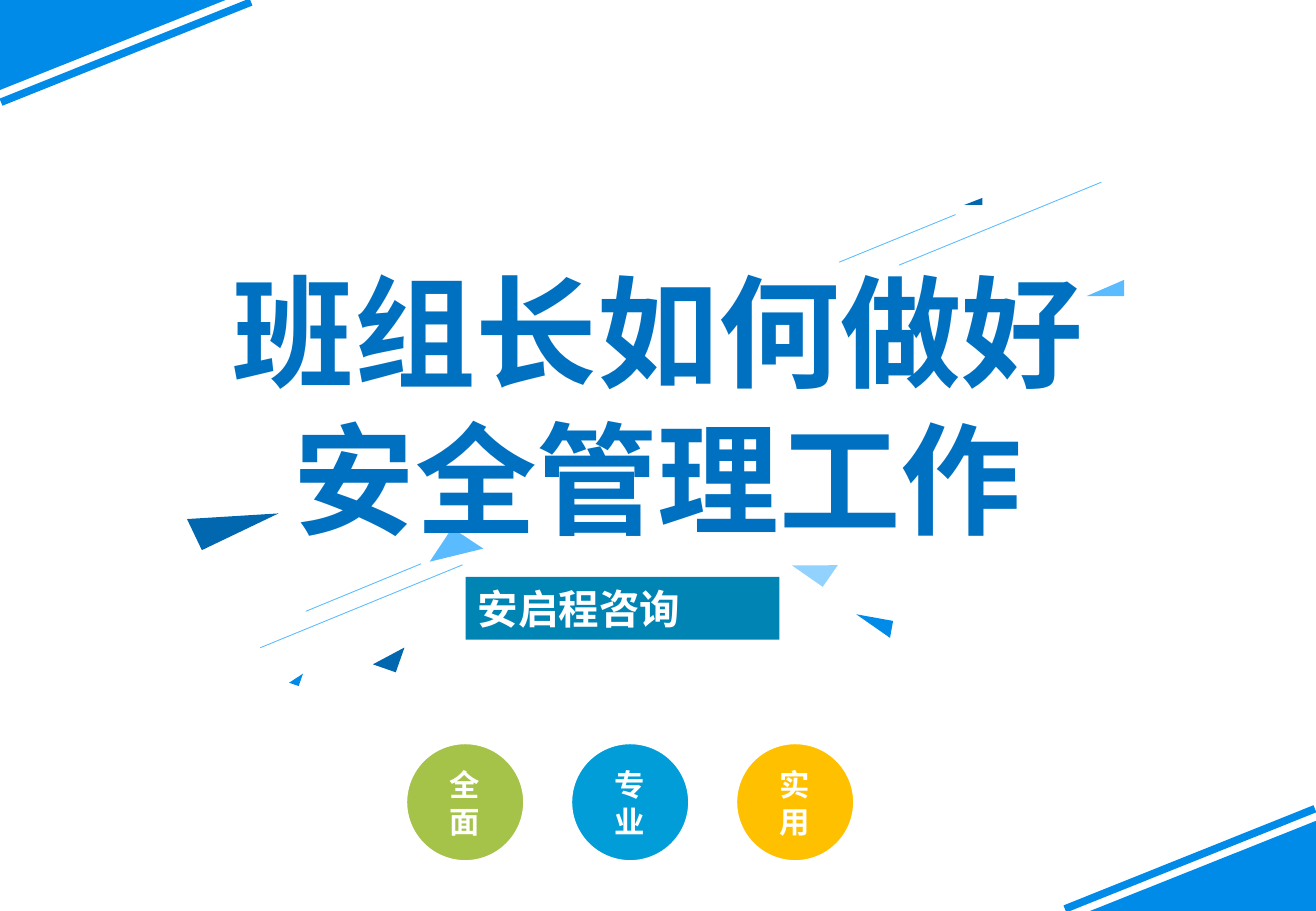
import pptx
import pptx.dml.color
import pptx.enum.shapes
import pptx.enum.text
import pptx.oxml
import pptx.oxml.ns
import pptx.util
from lxml import etree

SHAPES = pptx.enum.shapes.MSO_SHAPE
ALIGN = pptx.enum.text.PP_ALIGN
ANCHOR = pptx.enum.text.MSO_ANCHOR

WIDTH, HEIGHT = 1300, 900
CJK_FONT = "Noto Sans CJK SC"
NAVY, BLUE, SKY, PALE = "0168AF", "018BE9", "5ABCFE", "91D2FF"
WHITE = "FFFFFF"


def px(value):
    return pptx.util.Emu(value * 7620)


def color(hex_text):
    return pptx.dml.color.RGBColor.from_string(hex_text)


class Cover:
    """Draws on one title-only slide, with lengths in px (120 to the inch)."""

    def __init__(self, presentation):
        self.slide = presentation.slides.add_slide(presentation.slide_layouts[5])
        self.shapes = self.slide.shapes

    def paint(self, shape, fill, outline=None):
        shape.shadow.inherit = False
        shape.fill.solid()
        shape.fill.fore_color.rgb = color(fill)
        if outline:
            shape.line.color.rgb = color(outline)
            shape.line.width = pptx.util.Pt(1.5)
        else:
            shape.line.fill.background()

    def set_text(self, shape, lines, size, text_color, align, latin=CJK_FONT):
        frame = shape.text_frame
        frame.word_wrap = True
        frame.text = "\n".join(lines)
        for paragraph in frame.paragraphs:
            paragraph.alignment = align
            paragraph.line_spacing = pptx.util.Pt(round(size * 1.21))
            font = paragraph.font
            font.size = pptx.util.Pt(size)
            font.bold = True
            font.color.rgb = color(text_color)
            font.name = latin
            properties = paragraph._p.pPr.find(pptx.oxml.ns.qn("a:defRPr"))
            east_asian = etree.SubElement(properties, pptx.oxml.ns.qn("a:ea"))
            east_asian.set("typeface", CJK_FONT)

    def title(self, box, lines):
        title = self.shapes.title
        title.left, title.top, title.width, title.height = map(px, box)
        self.set_text(title, lines, 72, "0070C0", ALIGN.CENTER)
        title.text_frame.vertical_anchor = ANCHOR.TOP
        title.text_frame.auto_size = pptx.enum.text.MSO_AUTO_SIZE.SHAPE_TO_FIT_TEXT
        self.shapes._spTree.append(title._element)  # in front of the decoration

    def shape(self, kind, box, fill, rotation=0, outline=None):
        shape = self.shapes.add_shape(kind, *map(px, box))
        shape.rotation = rotation
        self.paint(shape, fill, outline)
        return shape

    def label(self, kind, box, fill, text, size, align, latin=CJK_FONT, outline=None):
        shape = self.shape(kind, box, fill, outline=outline)
        self.set_text(shape, [text], size, WHITE, align, latin)
        shape.text_frame.vertical_anchor = ANCHOR.MIDDLE

    def polygon(self, points, fill):
        first, *others = [(px(x), px(y)) for x, y in points]
        builder = self.shapes.build_freeform(*first, scale=1.0)
        builder.add_line_segments(others, close=True)
        self.paint(builder.convert_to_shape(), fill)

    def line(self, start, end, line_color, width):
        connector = self.shapes.add_connector(
            pptx.enum.shapes.MSO_CONNECTOR.STRAIGHT, *map(px, (*start, *end)))
        connector.line.color.rgb = color(line_color)
        connector.line.width = pptx.util.Pt(width)
        etree.SubElement(connector._element.spPr, pptx.oxml.ns.qn("a:effectLst"))


def draw_corners(cover):
    """Top-left corner, and the same turned by half a turn at bottom right."""
    triangle = [(0, 89), (0, 0), (223, 0)]
    stripe = [(1, 101), (248, 2)]
    for turned in (True, False):
        corner, edge = [
            [(WIDTH - x, HEIGHT - y) if turned else (x, y) for x, y in points]
            for points in (triangle, stripe)]
        cover.polygon(corner, BLUE)
        cover.line(*edge, BLUE, 4.5)


def draw_confetti(cover):
    triangles = [
        ((188, 493, 84, 34), 334.4, NAVY),
        ((431, 530, 40, 37), 123.5, SKY),
        ((371, 636, 26, 24), 289.2, NAVY),
        ((286, 665, 13, 10), 289.2, BLUE),
        ((844, 610, 37, 17), 190.2, BLUE),
        ((792, 540, 26, 37), 304.8, PALE),
        ((1084, 266, 16, 37), 270, SKY),
        ((958, 190, 7, 18), 270, NAVY),
    ]
    for box, rotation, fill in triangles:
        cover.shape(SHAPES.RIGHT_TRIANGLE, box, fill, rotation)
    streaks = [
        ((302, 604), (416, 557)),
        ((257, 640), (457, 558)),
        ((829, 259), (944, 212)),
        ((888, 262), (1088, 180)),
    ]
    for start, end in streaks:
        cover.line(start, end, SKY, 0.5)


def main():
    presentation = pptx.Presentation()
    presentation.slide_width, presentation.slide_height = px(WIDTH), px(HEIGHT)
    cover = Cover(presentation)
    draw_corners(cover)
    draw_confetti(cover)
    cover.title((30, 247, 1240, 302), ["班组长如何做好", "安全管理工作"])
    cover.label(SHAPES.RECTANGLE, (460, 570, 310, 62), "0084B4",
                "安启程咨询", 24, ALIGN.JUSTIFY)
    badges = [("全面", "A5C249"), ("专业", "009DD9"), ("实用", "FFC000")]
    for index, (text, fill) in enumerate(badges):
        cover.label(SHAPES.OVAL, (401 + 163 * index, 734, 117, 117), fill,
                    text, 18, ALIGN.CENTER, "Arial", WHITE)
    presentation.save("out.pptx")


if __name__ == "__main__":
    main()
